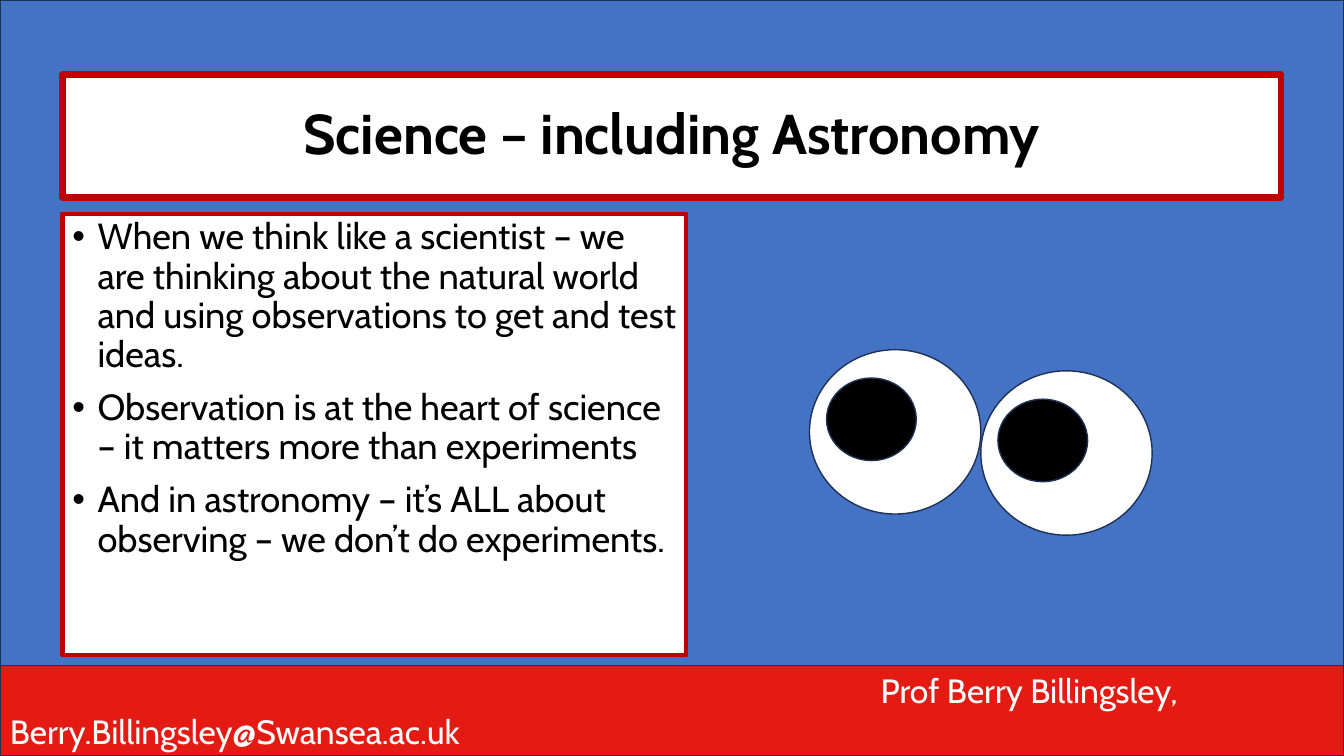
from lxml.etree import SubElement
from pptx import Presentation
from pptx.dml.color import RGBColor
from pptx.enum.shapes import MSO_SHAPE
from pptx.enum.text import MSO_ANCHOR, PP_ALIGN
from pptx.oxml.ns import qn
from pptx.util import Pt

TITLE = "Science – including Astronomy"
POINTS = [
    "When we think like a scientist – we are thinking about the natural world "
    "and using observations to get and test ideas.",
    "Observation is at the heart of science – it matters more than experiments",
    "And in astronomy – it’s ALL about observing – we don’t do experiments.",
]
PRESENTER = "Prof Berry Billingsley,"
EMAIL = "Berry.Billingsley@Swansea.ac.uk"

THEME = {
    "font": "Cabin",
    "sky": "4472C4", "band": "E41B13", "outline": "1E3256", "frame": "C00000",
    "white": "FFFFFF", "black": "000000",
    "title_size": 40, "body_size": 25.9, "footer_size": 24,
}

SLIDE_W, SLIDE_H = 960, 540
FOOTER_H = 64.8
FRAME_LEFT = 44.6
EYE_W, EYE_H = 122.4, 117.4
PUPIL_W, PUPIL_H = 64.1, 59
PUPIL_DX, PUPIL_DY = 12.2, 20.2
EYE_LEFT, EYE_TOP, EYE_DROP = 578.2, 249.8, 15.1


def add_panel(slide, kind, box, fill, line="outline", line_width=1):
    panel = slide.shapes.add_shape(kind, *(Pt(length) for length in box))
    panel.shadow.inherit = False
    panel.fill.solid()
    panel.fill.fore_color.rgb = RGBColor.from_string(THEME[fill])
    panel.line.color.rgb = RGBColor.from_string(THEME[line])
    panel.line.width = Pt(line_width)
    return panel


def write(panel, lines, *, size, color, bold=False, align=PP_ALIGN.LEFT,
          anchor=MSO_ANCHOR.MIDDLE, spacing=1.0, gap=0, bullet=False, indents=()):
    """Fill a panel with one paragraph per line; indents are left margins per line."""
    frame = panel.text_frame
    frame.word_wrap = True
    frame.vertical_anchor = anchor
    for index, line in enumerate(lines):
        paragraph = frame.add_paragraph() if index else frame.paragraphs[0]
        paragraph.alignment = align
        paragraph.line_spacing = spacing
        if index:
            paragraph.space_before = Pt(gap)
        properties = paragraph._p.get_or_add_pPr()
        if bullet:
            properties.set("marL", str(Pt(18)))
            properties.set("indent", str(Pt(-18)))
            SubElement(properties, qn("a:buFont"), typeface="Arial")
            SubElement(properties, qn("a:buChar"), char="•")
        elif indents:
            properties.set("marL", str(Pt(indents[index])))
        run = paragraph.add_run()
        run.text = line
        run.font.name = THEME["font"]
        run.font.size = Pt(size)
        run.font.bold = bold
        run.font.color.rgb = RGBColor.from_string(THEME[color])


def add_eye(slide, left, top):
    add_panel(slide, MSO_SHAPE.OVAL, (left, top, EYE_W, EYE_H), "white")
    add_panel(slide, MSO_SHAPE.OVAL,
              (left + PUPIL_DX, top + PUPIL_DY, PUPIL_W, PUPIL_H), "black")


def main():
    deck = Presentation()
    deck.slide_width, deck.slide_height = Pt(SLIDE_W), Pt(SLIDE_H)
    slide = deck.slides.add_slide(deck.slide_layouts[6])

    add_panel(slide, MSO_SHAPE.RECTANGLE, (0, 0, SLIDE_W, SLIDE_H), "sky")
    footer = add_panel(slide, MSO_SHAPE.RECTANGLE,
                       (0, SLIDE_H - FOOTER_H, SLIDE_W, FOOTER_H), "band")
    write(footer, [PRESENTER, EMAIL], size=THEME["footer_size"], color="white",
          indents=(622, 0))

    heading = add_panel(slide, MSO_SHAPE.RECTANGLE, (FRAME_LEFT, 53.3, 870.5, 87.8),
                        "white", "frame", 4.5)
    write(heading, [TITLE], size=THEME["title_size"], color="black", bold=True,
          align=PP_ALIGN.CENTER, spacing=0.9)

    body = add_panel(slide, MSO_SHAPE.RECTANGLE, (FRAME_LEFT, 152.6, 445.7, 315.4),
                     "white", "frame", 3)
    write(body, POINTS, size=THEME["body_size"], color="black",
          anchor=MSO_ANCHOR.TOP, spacing=0.9, gap=10, bullet=True)

    for index in range(2):
        add_eye(slide, EYE_LEFT + index * EYE_W, EYE_TOP + index * EYE_DROP)

    deck.save("out.pptx")


if __name__ == "__main__":
    main()
